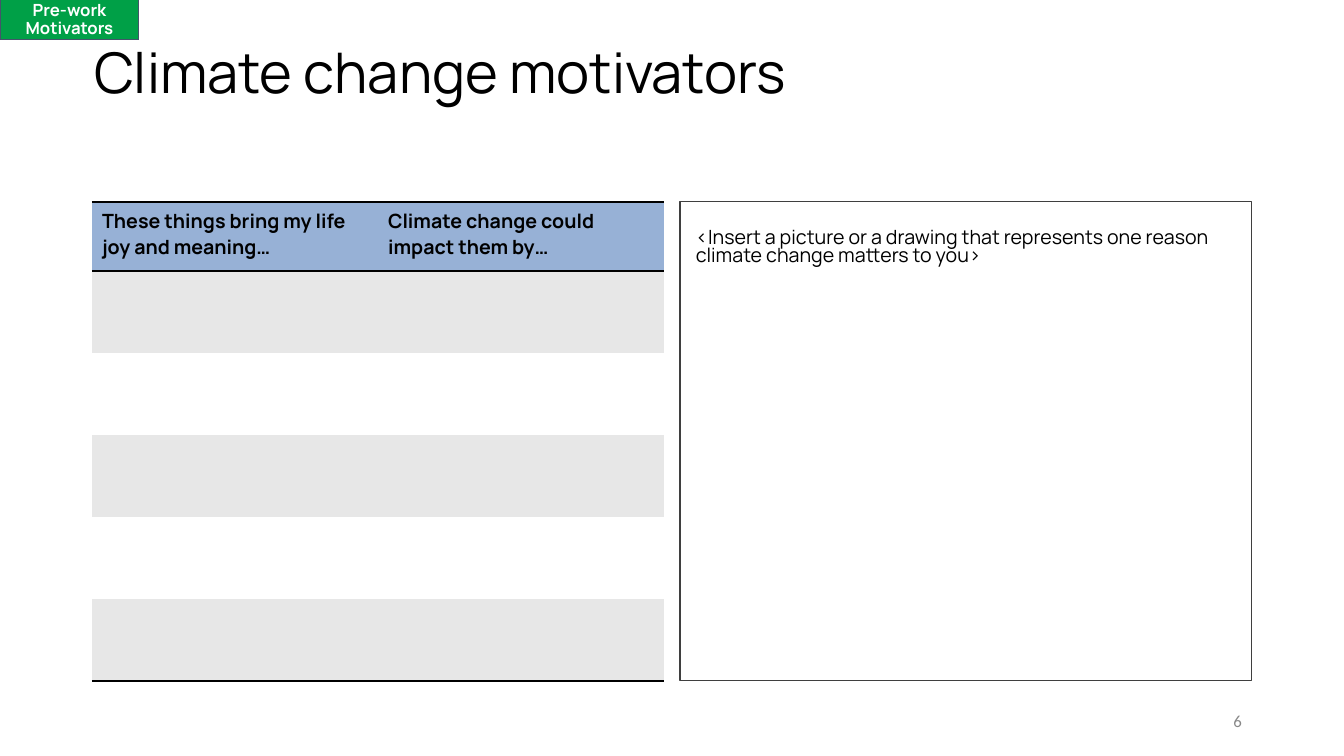
"""Build the climate change motivators worksheet slide."""
from dataclasses import dataclass

from lxml.etree import SubElement
from pptx import Presentation
from pptx.dml.color import RGBColor
from pptx.enum.shapes import MSO_SHAPE
from pptx.enum.text import MSO_ANCHOR, MSO_AUTO_SIZE, PP_ALIGN
from pptx.oxml.ns import qn
from pptx.util import Emu, Pt

SLIDE_WIDTH, SLIDE_HEIGHT = 1344, 756
EMU_PER_PX = 12192000 / SLIDE_WIDTH
HEADER_HEIGHT, ENTRY_HEIGHT, ENTRY_COUNT = 69, 82, 5
HEADINGS = (
    "These things bring my life joy and meaning…",
    "Climate change could impact them by…",
)


@dataclass(frozen=True)
class Theme:
    font: str = "Manrope"
    number_font: str = "Calibri"
    text: str = "000000"
    inverse: str = "FFFFFF"
    muted: str = "888888"
    header: str = "97B1D6"
    bands: tuple[str, str] = ("E7E7E7", "FFFFFF")
    frame: str = "3F3F3F"
    badge: str = "00A047"
    badge_line: str = "44546A"
    title_size: int = 40
    body_size: int = 14
    small_size: int = 12
    thin_line: float = 0.75
    rule: int = 2


THEME = Theme()


@dataclass(frozen=True)
class Box:
    left: int
    top: int
    width: int
    height: int

    def emu(self) -> tuple[Emu, Emu, Emu, Emu]:
        return px(self.left), px(self.top), px(self.width), px(self.height)


@dataclass(frozen=True)
class TextStyle:
    size: int
    color: str = THEME.text
    font: str = THEME.font
    bold: bool = False
    align: PP_ALIGN = PP_ALIGN.LEFT
    anchor: MSO_ANCHOR = MSO_ANCHOR.TOP
    spacing: float = 1.0
    inset_left: int = 10
    inset_top: int = 5
    inset_bottom: int = 5


@dataclass(frozen=True)
class Panel:
    box: Box
    lines: tuple[str, ...]
    style: TextStyle
    fill: str | None = None
    line: str | None = None


TITLE_BOX = Box(84, 40, 1182, 146)
TITLE_STYLE = TextStyle(THEME.title_size, spacing=0.9)
TABLE_BOX = Box(92, 202, 572, HEADER_HEIGHT + ENTRY_COUNT * ENTRY_HEIGHT)
HEADING_STYLE = TextStyle(THEME.body_size, bold=True)
PANELS = (
    Panel(
        Box(680, 202, 572, TABLE_BOX.height),
        ("<Insert a picture or a drawing that represents one reason climate change matters to you>",),
        TextStyle(THEME.body_size, spacing=0.8, inset_left=16, inset_top=27),
        line=THEME.frame,
    ),
    Panel(
        Box(950, 701, 302, 40),
        ("6",),
        TextStyle(THEME.small_size, THEME.muted, THEME.number_font,
                  align=PP_ALIGN.RIGHT, anchor=MSO_ANCHOR.MIDDLE),
    ),
    Panel(
        Box(0, 0, 139, 40),
        ("Pre-work", "Motivators"),
        TextStyle(THEME.small_size, THEME.inverse, bold=True, align=PP_ALIGN.CENTER,
                  anchor=MSO_ANCHOR.MIDDLE, spacing=0.88, inset_top=0, inset_bottom=0),
        THEME.badge,
        THEME.badge_line,
    ),
)


def px(length: int) -> Emu:
    return Emu(round(length * EMU_PER_PX))


def rgb(color: str) -> RGBColor:
    return RGBColor.from_string(color)


def write_text(frame, lines: tuple[str, ...], style: TextStyle) -> None:
    frame.text = "\n".join(lines)
    for paragraph in frame.paragraphs:
        paragraph.alignment = style.align
        paragraph.line_spacing = style.spacing
        paragraph.font.name = style.font
        paragraph.font.size = Pt(style.size)
        paragraph.font.bold = style.bold
        paragraph.font.color.rgb = rgb(style.color)


def format_frame(frame, style: TextStyle) -> None:
    frame.word_wrap = True
    frame.auto_size = MSO_AUTO_SIZE.NONE
    frame.vertical_anchor = style.anchor
    frame.margin_left, frame.margin_right = px(style.inset_left), px(10)
    frame.margin_top, frame.margin_bottom = px(style.inset_top), px(style.inset_bottom)


def add_title(slide, text: str) -> None:
    title = slide.shapes.title
    title.left, title.top, title.width, title.height = TITLE_BOX.emu()
    format_frame(title.text_frame, TITLE_STYLE)
    write_text(title.text_frame, (text,), TITLE_STYLE)


def add_panel(slide, panel: Panel) -> None:
    if panel.line:
        shape = slide.shapes.add_shape(MSO_SHAPE.RECTANGLE, *panel.box.emu())
        shape.shadow.inherit = False
        shape.line.color.rgb = rgb(panel.line)
        shape.line.width = Pt(THEME.thin_line)
        if panel.fill:
            shape.fill.solid()
            shape.fill.fore_color.rgb = rgb(panel.fill)
        else:
            shape.fill.background()
    else:
        shape = slide.shapes.add_textbox(*panel.box.emu())
    format_frame(shape.text_frame, panel.style)
    write_text(shape.text_frame, panel.lines, panel.style)


def set_borders(cell, top: bool, bottom: bool) -> None:
    properties = cell._tc.get_or_add_tcPr()
    sides = {"a:lnL": False, "a:lnR": False, "a:lnT": top, "a:lnB": bottom}
    for position, (tag, ruled) in enumerate(sides.items()):
        border = SubElement(properties, qn(tag), w=str(Pt(THEME.rule) if ruled else 0))
        if ruled:
            fill = SubElement(border, qn("a:solidFill"))
            SubElement(fill, qn("a:srgbClr"), val=THEME.text)
        else:
            SubElement(border, qn("a:noFill"))
        properties.insert(position, border)


def add_motivator_table(slide) -> None:
    row_count = ENTRY_COUNT + 1
    table = slide.shapes.add_table(row_count, len(HEADINGS), *TABLE_BOX.emu()).table
    ruled_edges = {0, 1, row_count}
    for row_index, row in enumerate(table.rows):
        row.height = px(ENTRY_HEIGHT if row_index else HEADER_HEIGHT)
        color = THEME.bands[(row_index - 1) % 2] if row_index else THEME.header
        for cell in row.cells:
            cell.fill.solid()
            cell.fill.fore_color.rgb = rgb(color)
            set_borders(cell, row_index in ruled_edges, row_index + 1 in ruled_edges)
    for cell, heading in zip(table.rows[0].cells, HEADINGS):
        write_text(cell.text_frame, (heading,), HEADING_STYLE)


def main() -> None:
    presentation = Presentation()
    presentation.slide_width = px(SLIDE_WIDTH)
    presentation.slide_height = px(SLIDE_HEIGHT)
    slide = presentation.slides.add_slide(presentation.slide_layouts.get_by_name("Title Only"))
    add_title(slide, "Climate change motivators")
    add_motivator_table(slide)
    for panel in PANELS:
        add_panel(slide, panel)
    presentation.save("out.pptx")


if __name__ == "__main__":
    main()
